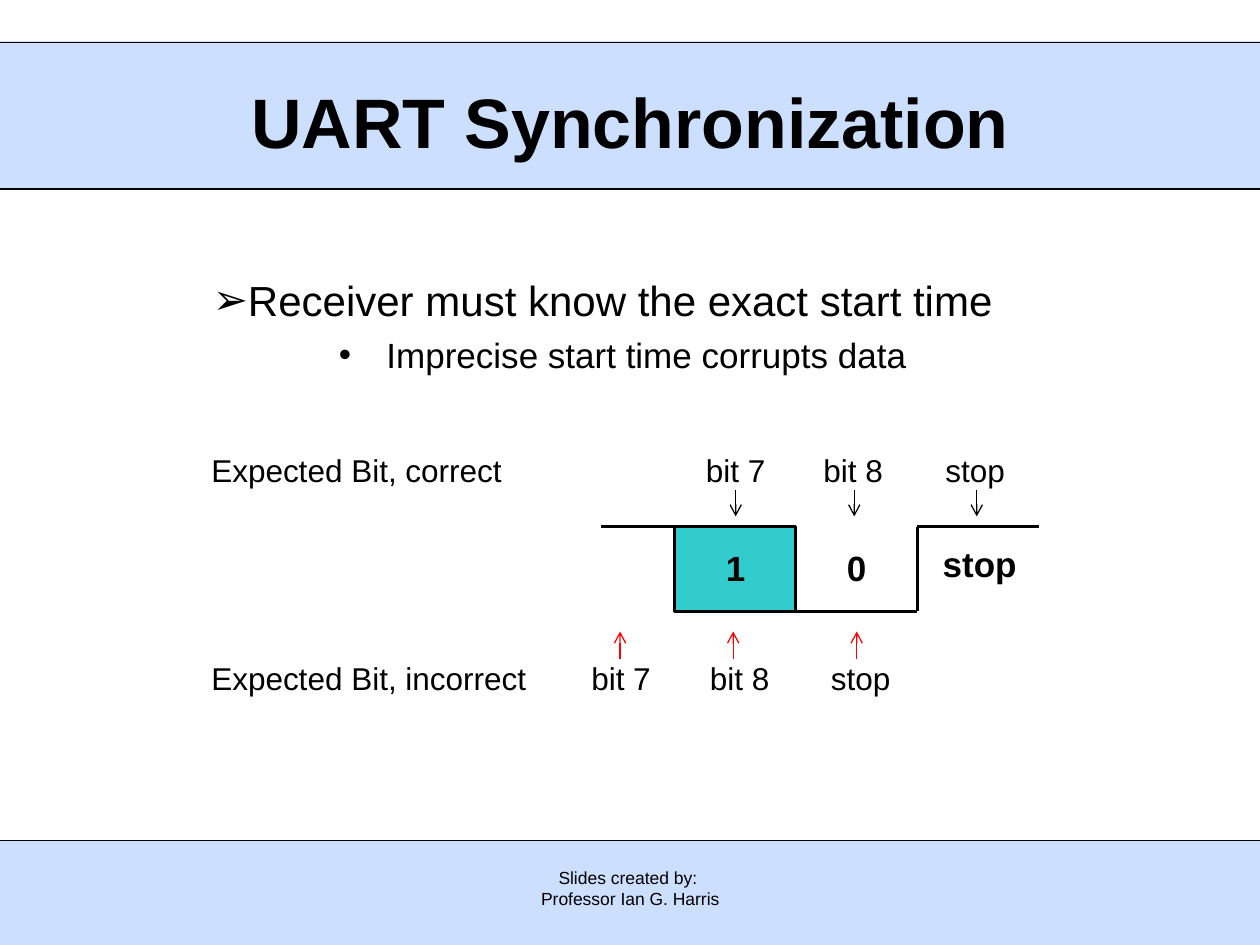
from dataclasses import dataclass

from lxml.etree import SubElement
from pptx import Presentation
from pptx.dml.color import RGBColor
from pptx.enum.shapes import MSO_CONNECTOR, MSO_SHAPE
from pptx.enum.text import MSO_ANCHOR, PP_ALIGN
from pptx.oxml.ns import qn
from pptx.util import Cm, Pt


@dataclass(frozen=True)
class Theme:
    font: str = "Arial"
    ink: str = "000000"
    band: str = "CDDFFF"
    bit: str = "33CCCC"
    wrong: str = "FF0000"
    title: float = 40
    body: float = 24
    sub: float = 20
    label: float = 18
    footer: float = 10
    thin: float = 0.75
    thick: float = 1.75


T = Theme()
WIDTH, HEIGHT = 25.4, 19.05

# Signal geometry
BIT_W = 2.45
BIT_X = 13.59
HIGH, LOW = 10.62, 12.32

# Expected bits: text, label centre, arrow position
CORRECT = [("bit 7", 14.83, 14.83), ("bit 8", 17.2, 17.22), ("stop", 19.66, 19.69)]
INCORRECT = [("bit 7", 12.52, 12.5), ("bit 8", 14.91, 14.78), ("stop", 17.35, 17.27)]


def write(p, text, size, bold=False, align=PP_ALIGN.LEFT, spacing=None):
    p.alignment = align
    p.line_spacing = spacing
    r = p.add_run()
    r.text = text
    r.font.name = T.font
    r.font.size = Pt(size)
    r.font.bold = bold
    r.font.color.rgb = RGBColor.from_string(T.ink)


def set_bullet(p, char, margin, hang):
    pPr = p._p.get_or_add_pPr()
    pPr.set("marL", str(Cm(margin)))
    pPr.set("indent", str(-Cm(hang)))
    SubElement(pPr, qn("a:buFont")).set("typeface", T.font)
    SubElement(pPr, qn("a:buChar")).set("char", char)


def add_text(s, x, y, w, h, lines, size, wrap=False, **fmt):
    tf = s.shapes.add_textbox(Cm(x), Cm(y), Cm(w), Cm(h)).text_frame
    tf.word_wrap = wrap
    for i, line in enumerate(lines):
        write(tf.add_paragraph() if i else tf.paragraphs[0], line, size, **fmt)
    return tf


def add_centred(s, text, cx, y, w, h, size, bold=False):
    add_text(s, cx - w / 2, y, w, h, [text], size, bold=bold, align=PP_ALIGN.CENTER)


def add_rect(s, x, y, w, h, fill, line, weight):
    sp = s.shapes.add_shape(MSO_SHAPE.RECTANGLE, Cm(x), Cm(y), Cm(w), Cm(h))
    sp.shadow.inherit = False
    sp.fill.solid()
    sp.fill.fore_color.rgb = RGBColor.from_string(fill)
    sp.line.color.rgb = RGBColor.from_string(line)
    sp.line.width = Pt(weight)


def add_line(s, x1, y1, x2, y2, color=T.ink, weight=T.thin, arrow=False):
    c = s.shapes.add_connector(MSO_CONNECTOR.STRAIGHT, Cm(x1), Cm(y1), Cm(x2), Cm(y2))
    c.line.color.rgb = RGBColor.from_string(color)
    c.line.width = Pt(weight)
    if arrow:
        SubElement(c.line._get_or_add_ln(), qn("a:tailEnd")).set("type", "arrow")
    SubElement(c._element.spPr, qn("a:effectLst"))


def add_bands(s):
    for y, h in ((16.94, HEIGHT - 16.94), (0.85, 2.96)):
        add_rect(s, 0, y, WIDTH, h, T.band, T.band, T.thin)
    for y in (0.85, 3.81, 16.94):
        add_line(s, 0, y, WIDTH, y)
    add_text(s, 8.69, 17.35, 8.03, 1.24, ["Slides created by: ", "Professor Ian G. Harris"],
             T.footer, wrap=True, align=PP_ALIGN.CENTER)


def add_title(s, text):
    sp = s.shapes.title
    sp.left, sp.top, sp.width, sp.height = Cm(1.9), Cm(0.85), Cm(21.6), Cm(3.17)
    sp.text_frame.vertical_anchor = MSO_ANCHOR.MIDDLE
    write(sp.text_frame.paragraphs[0], text, T.title, bold=True, align=PP_ALIGN.CENTER)
    # Bring the title in front of its band
    sp.element.getparent().append(sp.element)


def add_points(s):
    tf = add_text(s, 4.04, 5.21, 16.36, 2.41, ["Receiver must know the exact start time"],
                  T.body, wrap=True, spacing=1.2)
    set_bullet(tf.paragraphs[0], "➢", 0.71, 0.71)
    p = tf.add_paragraph()
    p.level = 1
    write(p, "Imprecise start time corrupts data", T.sub, spacing=1.2)
    set_bullet(p, "•", 3.5, 0.96)


def add_signal(s):
    add_rect(s, BIT_X, HIGH, BIT_W, LOW - HIGH, T.bit, T.ink, T.thick)
    x0, x1, x2, x3 = (BIT_X + i * BIT_W for i in range(4))
    for ends in ((x0, HIGH, 12.12, HIGH), (x1, LOW, x2, LOW),
                 (x2, LOW, x2, HIGH), (x2, HIGH, x3, HIGH)):
        add_line(s, *ends, weight=T.thick)
    for text, cx, y, w in (("1", 14.83, 10.9, 0.91), ("0", 17.27, 10.9, 0.91),
                           ("stop", 19.75, 10.82, 2.16)):
        add_centred(s, text, cx, y, w, 1.12, T.sub, bold=True)


def add_expected(s, name, width, bits, y, start, end, color):
    add_text(s, 4.01, y, width, 1.02, [name], T.label)
    for text, cx, x in bits:
        add_centred(s, text, cx, y, 1.73, 1.02, T.label)
        add_line(s, x, start, x, end, color=color, arrow=True)


def main():
    prs = Presentation()
    prs.slide_width, prs.slide_height = Cm(WIDTH), Cm(HEIGHT)
    s = prs.slides.add_slide(prs.slide_layouts[5])

    # Frame and heading
    add_bands(s)
    add_title(s, "UART Synchronization")

    # Statement
    add_points(s)

    # Timing diagram
    add_signal(s)
    add_expected(s, "Expected Bit, correct", 6.43, CORRECT, 8.97, 9.88, 10.41, T.ink)
    add_expected(s, "Expected Bit, incorrect", 6.93, INCORRECT, 13.16, 13.28, 12.73, T.wrong)

    prs.save("out.pptx")


if __name__ == "__main__":
    main()
